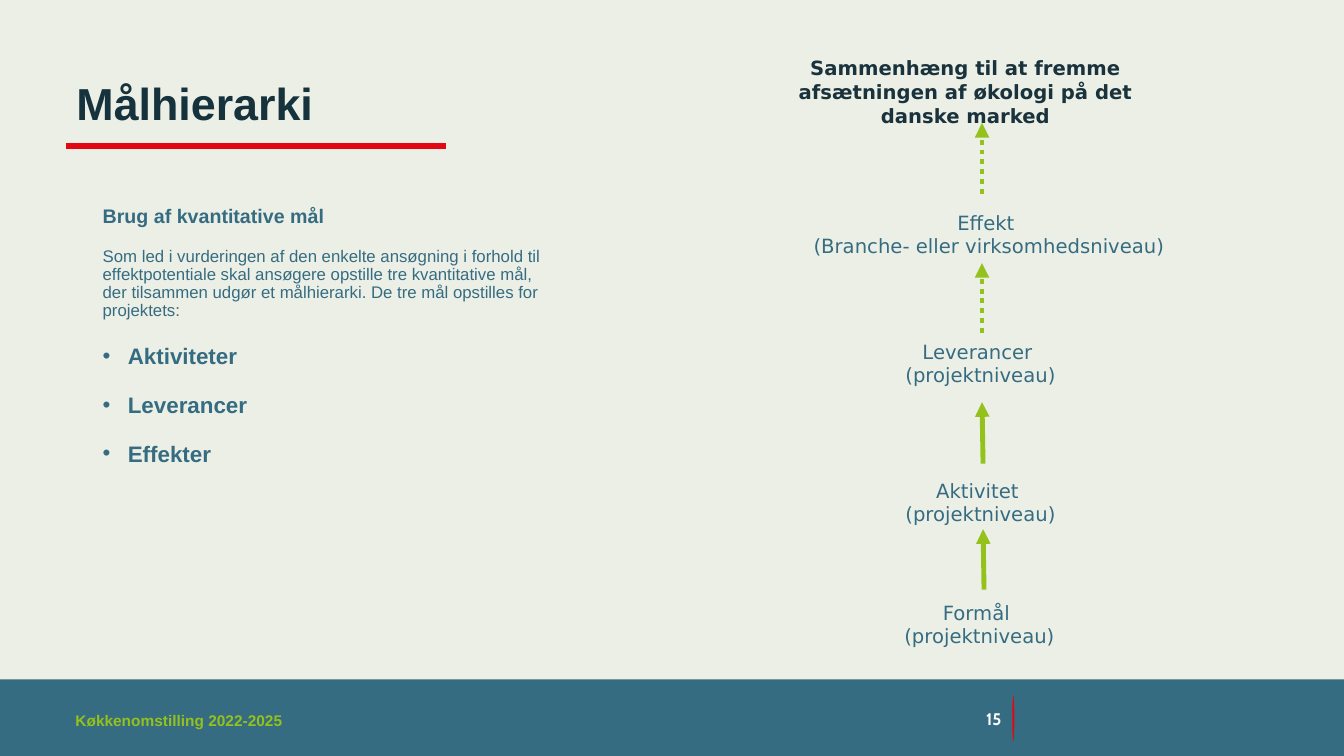
from lxml import etree
from pptx import Presentation
from pptx.dml.color import RGBColor
from pptx.enum.dml import MSO_LINE
from pptx.enum.shapes import MSO_CONNECTOR as LINE, MSO_SHAPE as SHAPE
from pptx.enum.text import MSO_ANCHOR as ANCHOR, PP_ALIGN as ALIGN
from pptx.oxml.ns import qn
from pptx.util import Inches, Pt

COLOURS = dict(page="ECEFE6", backdrop="E7E6E6", teal="366C81", red="E30613",
               dark="16323C", goal="19323C", green="94C11C", olive="52614A",
               white="FFFFFF")
WIDTH, HEIGHT = 13.33, 7.5
BAND_TOP = 6.74

TITLE = "Målhierarki"
HEADING = "Brug af kvantitative mål"
INTRO = ("Som led i vurderingen af den enkelte ansøgning i forhold til "
         "effektpotentiale skal ansøgere opstille tre kvantitative mål, der "
         "tilsammen udgør et målhierarki. De tre mål opstilles for projektets")
TARGETS = ["Aktiviteter", "Leverancer", "Effekter"]
FOOTER = "Køkkenomstilling 2022-2025"
PAGE_NUMBER = "15"
GOAL = "Sammenhæng til at fremme afsætningen af økologi på det danske marked"
# left, top, width, name, scope
LEVELS = [
    (7.96, 2.04, 3.7, "Effekt ", "(Branche- eller virksomhedsniveau)"),
    (7.94, 3.32, 3.57, "Leverancer ", "(projektniveau)"),
    (7.94, 4.7, 3.57, "Aktivitet ", "(projektniveau)"),
    (7.93, 5.91, 3.57, "Formål ", "(projektniveau)"),
]
# start x, start y, end x, end y, dotted
ARROWS = [
    (9.74, 1.92, 9.74, 1.22, True),
    (9.74, 3.3, 9.74, 2.61, True),
    (9.75, 4.6, 9.74, 3.99, False),
    (9.76, 5.85, 9.75, 5.25, False),
]

deck = Presentation()
deck.slide_width, deck.slide_height = Inches(WIDTH), Inches(HEIGHT)
slide = deck.slides.add_slide(deck.slide_layouts[6])


def rgb(name):
    return RGBColor.from_string(COLOURS[name])


def add_block(kind, left, top, width, height, colour):
    block = slide.shapes.add_shape(kind, *map(Inches, (left, top, width, height)))
    block.shadow.inherit = False
    block.fill.solid()
    block.fill.fore_color.rgb = rgb(colour)
    block.line.fill.background()


def add_line(x1, y1, x2, y2, colour, weight):
    line = slide.shapes.add_connector(LINE.STRAIGHT, *map(Inches, (x1, y1, x2, y2)))
    line.line.color.rgb = rgb(colour)
    line.line.width = Pt(weight)
    etree.SubElement(line._element.spPr, qn("a:effectLst"))
    return line


def style(paragraph, size, colour, bold=False, font="Arial"):
    for run in paragraph.runs:
        run.font.size, run.font.bold, run.font.name = Pt(size), bold, font
        run.font.color.rgb = rgb(colour)


def add_text(left, top, width, height, lines, size, colour, bold=False,
             font="Arial", align=ALIGN.LEFT, anchor=ANCHOR.TOP):
    box = slide.shapes.add_textbox(*map(Inches, (left, top, width, height)))
    frame = box.text_frame
    frame.word_wrap = True
    frame.vertical_anchor = anchor
    frame.text = "\n".join(lines)
    for paragraph in frame.paragraphs:
        paragraph.alignment = align
        style(paragraph, size, colour, bold, font)
    return frame


def add_bullet(paragraph):
    props = paragraph._p.get_or_add_pPr()
    props.set("marL", str(Inches(0.25)))
    props.set("indent", str(Inches(-0.25)))
    etree.SubElement(props, qn("a:buFont")).set("typeface", "Arial")
    etree.SubElement(props, qn("a:buChar")).set("char", "•")


slide.background.fill.solid()
slide.background.fill.fore_color.rgb = rgb("backdrop")
add_block(SHAPE.RECTANGLE, 0, 0, WIDTH, BAND_TOP, "page")
add_block(SHAPE.RECTANGLE, 0, BAND_TOP, WIDTH, HEIGHT - BAND_TOP, "teal")
add_block(SHAPE.OVAL, 10.04, 6.9, 0.02, 0.45, "red")
add_line(0.65, 1.45, 4.42, 1.45, "red", 4)

title = add_text(0.66, 0.72, 3.75, 0.62, [TITLE], 32, "dark", True,
                 anchor=ANCHOR.BOTTOM)
title.paragraphs[0].line_spacing = 0.9

body = add_text(0.92, 2, 4.73, 4.76, [HEADING, INTRO, *TARGETS], 16, "teal", True)
heading, intro, *targets = body.paragraphs
style(heading, 14, "teal", True)
heading.line_spacing, heading.space_after = 0.9, Pt(14.5)
intro.add_run().text = ":"
style(intro, 12, "teal")
intro.runs[-1].font.color.rgb = rgb("olive")
intro.line_spacing, intro.space_after = 0.9, Pt(6)
for target in targets:
    target.line_spacing, target.space_after = 1.5, Pt(6)
    add_bullet(target)

add_text(7.79, 0.51, 3.57, 0.81, [GOAL], 14, "goal", True, "DejaVu Sans", ALIGN.CENTER)
for left, top, width, *lines in LEVELS:
    add_text(left, top, width, 0.57, lines, 14, "teal", False, "DejaVu Sans",
             ALIGN.CENTER)
for *ends, dotted in ARROWS:
    arrow = add_line(*ends, "green", 3.5)
    if dotted:
        arrow.line.dash_style = MSO_LINE.ROUND_DOT
    outline = arrow.line._get_or_add_ln()
    etree.SubElement(outline, qn("a:tailEnd")).set("type", "triangle")

add_text(0.65, 7.01, 2.65, 0.42, [FOOTER], 11, "green", True)
add_text(9.37, 7.04, 0.66, 0.18, [PAGE_NUMBER], 12, "white", True, "Cabin",
         ALIGN.RIGHT, ANCHOR.MIDDLE)

deck.save("out.pptx")
